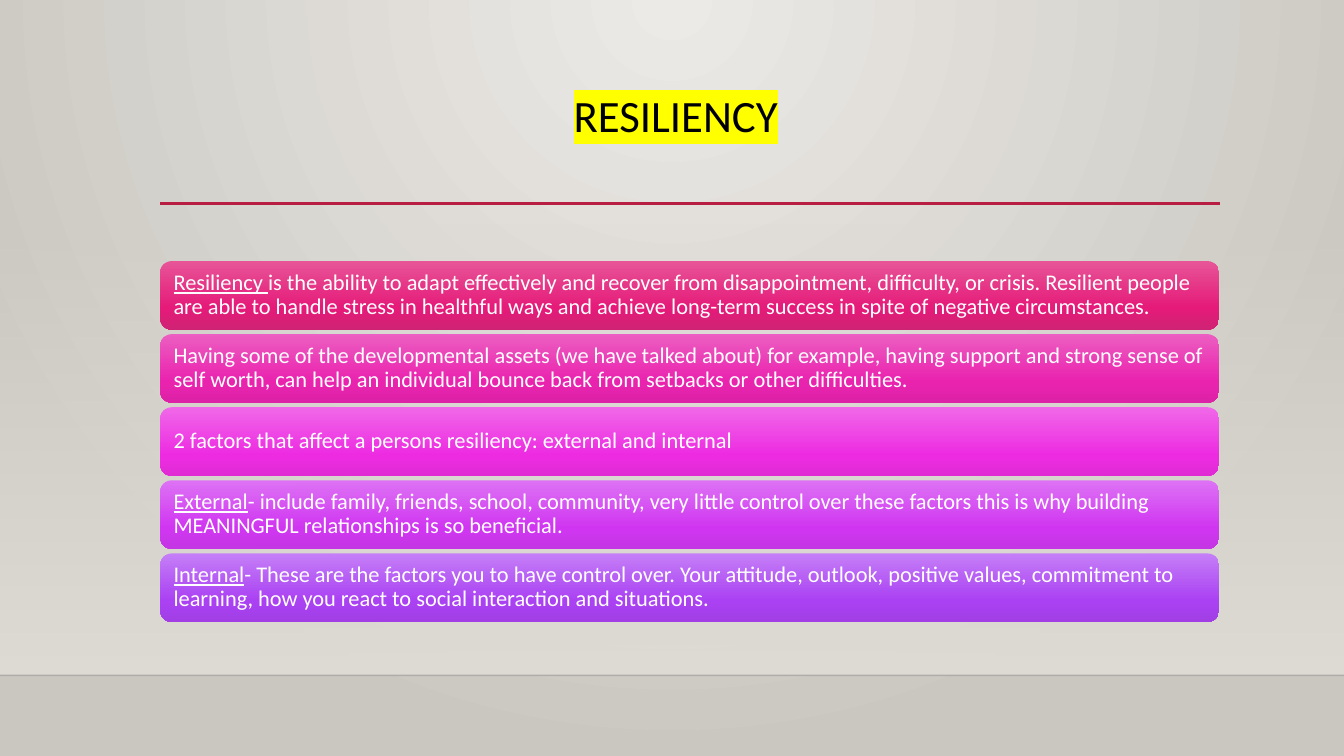
"""Build the resiliency slide."""
from lxml import etree
from pptx import Presentation
from pptx.dml.color import RGBColor
from pptx.enum.shapes import MSO_CONNECTOR, MSO_SHAPE
from pptx.enum.text import MSO_ANCHOR, PP_ALIGN
from pptx.oxml.ns import qn
from pptx.util import Inches, Pt

RECT, ROUND = MSO_SHAPE.RECTANGLE, MSO_SHAPE.ROUNDED_RECTANGLE
LINE = MSO_CONNECTOR.STRAIGHT
TOP, MIDDLE = MSO_ANCHOR.TOP, MSO_ANCHOR.MIDDLE
LEFT = PP_ALIGN.LEFT

COLORS = {"black": "000000", "white": "FFFFFF", "red": "B71E42",
          "mark": "FFFF00", "glow": "ECEAE7", "edge": "CAC7C1", "wall": "DFDBD5"}

BARS = [
    (("E75597", "E51A79", "CF2374"), "Resiliency ",
     "is the ability to adapt effectively and recover from disappointment, difficulty, or crisis. "
     "Resilient people are able to handle stress in healthful ways and achieve long-term success "
     "in spite of negative circumstances."),
    (("EC5EC1", "EA23AF", "DC22A6"), "",
     "Having some of the developmental assets (we have talked about) for example, having support "
     "and strong sense of self worth, can help an individual bounce back from setbacks or other "
     "difficulties."),
    (("F068E8", "ED2CE2", "E02BD5"), "",
     "2 factors that affect a persons resiliency: external and internal"),
    (("DD73F4", "D036F1", "C435E3"), "External",
     "- include family, friends, school, community, very little control over these factors this "
     "is why building MEANINGFUL relationships is so beneficial."),
    (("C57FF7", "AA41F3", "A13FE5"), "Internal",
     "- These are the factors you to have control over. Your attitude, outlook, positive values, "
     "commitment to learning, how you react to social interaction and situations."),
]


def add(parent, tag, **attrs):
    """Append a drawing element with attributes."""
    node = etree.SubElement(parent, qn(tag))
    for key, value in attrs.items():
        node.set(key, str(value))
    return node


class Board:
    """Hold the style and the current slide."""

    font = "Calibri"
    ink = {"black": RGBColor.from_string(COLORS["black"]),
           "white": RGBColor.from_string(COLORS["white"])}

    def __init__(self, slide):
        """Keep the slide."""
        self.slide = slide

    def blend(self, owner, stops, radial=False):
        """Rewrite the gradient of an element from (percent, color, alpha) stops."""
        grad = owner.find(".//" + qn("a:gradFill"))
        for child in list(grad):
            grad.remove(child)
        row = add(grad, "a:gsLst")
        for place, color, alpha in stops:
            stop = add(row, "a:gs", pos=place * 1000)
            tint = add(stop, "a:srgbClr", val=color)
            if alpha < 100:
                add(tint, "a:alpha", val=alpha * 1000)
        if radial:
            way = add(grad, "a:path", path="circle")
            add(way, "a:fillToRect", l=43000, t=0, r=43000, b=100000)
        else:
            add(grad, "a:lin", ang=5400000, scaled=0)

    def back(self, stops):
        """Fill the background with a radial gradient."""
        self.slide.background.fill.gradient()
        self.blend(self.slide._element, stops, True)

    def box(self, kind, left, top, width, height, stops):
        """Add a gradient shape without outline or shadow."""
        shape = self.slide.shapes.add_shape(
            kind, Inches(left), Inches(top), Inches(width), Inches(height))
        shape.shadow.inherit = False
        shape.line.fill.background()
        shape.fill.gradient()
        self.blend(shape._element, stops)
        return shape

    def rule(self, left, right, top, color, width, alpha=100):
        """Add a horizontal line."""
        line = self.slide.shapes.add_connector(
            LINE, Inches(left), Inches(top), Inches(right), Inches(top))
        line.line.color.rgb = RGBColor.from_string(color)
        line.line.width = Pt(width)
        if alpha < 100:
            add(line._element.find(".//" + qn("a:srgbClr")), "a:alpha", val=alpha * 1000)
        add(line._element.spPr, "a:effectLst")

    def text(self, shape, parts, size, color, anchor, inset):
        """Write (text, underline) parts as one paragraph."""
        frame = shape.text_frame
        look = {"word_wrap": True, "vertical_anchor": anchor,
                "margin_left": Inches(0.1), "margin_right": Inches(0.1),
                "margin_top": Inches(inset), "margin_bottom": Inches(inset)}
        for key, value in look.items():
            setattr(frame, key, value)
        para = frame.paragraphs[0]
        para.alignment = LEFT
        para.line_spacing = 0.9
        for words, under in parts:
            run = para.add_run()
            run.text = words
            run.font.color.rgb = self.ink[color]
            style = {"size": Pt(size), "name": self.font, "underline": under}
            for key, value in style.items():
                setattr(run.font, key, value)
        return para

    def title(self, words, left, top, width, height, indent):
        """Add a highlighted title, indented from the left."""
        shape = self.slide.shapes.add_textbox(
            Inches(left), Inches(top), Inches(width), Inches(height))
        para = self.text(shape, [(words, False)], 32, "black", TOP, 0.05)
        para._p.get_or_add_pPr().set("marL", str(Inches(indent)))
        fill = para._p.find(".//" + qn("a:solidFill"))
        mark = etree.Element(qn("a:highlight"))
        add(mark, "a:srgbClr", val=COLORS["mark"])
        fill.addnext(mark)

    def bar(self, top, tints, lead, body):
        """Add a rounded bar with an underlined lead and body text."""
        stops = [(place, tint, 100) for place, tint in zip((0, 69, 100), tints)]
        shape = self.box(ROUND, 1.59, top, 10.5, 0.68, stops)
        parts = [(words, under) for words, under in ((lead, True), (body, False)) if words]
        self.text(shape, parts, 16, "white", MIDDLE, 0.1)


def main():
    """Build and save the slide."""
    deck = Presentation()
    deck.slide_width, deck.slide_height = Inches(13.33), Inches(7.5)
    board = Board(deck.slides.add_slide(deck.slide_layouts[6]))
    board.back([(0, COLORS["glow"], 100), (100, COLORS["edge"], 100)])
    board.box(RECT, 0, 2.21, 13.33, 4.49,
              [(0, COLORS["wall"], 0), (100, COLORS["wall"], 100)])
    board.rule(0, 13.33, 6.7, COLORS["black"], 1, 20)
    board.rule(1.59, 12.1, 2.02, COLORS["red"], 2.5)
    board.title("RESILIENCY", 1.59, 0.88, 10.5, 1.15, 4)
    for index, (tints, lead, body) in enumerate(BARS):
        board.bar(2.59 + index * 0.725, tints, lead, body)
    deck.save("out.pptx")


if __name__ == "__main__":
    main()
